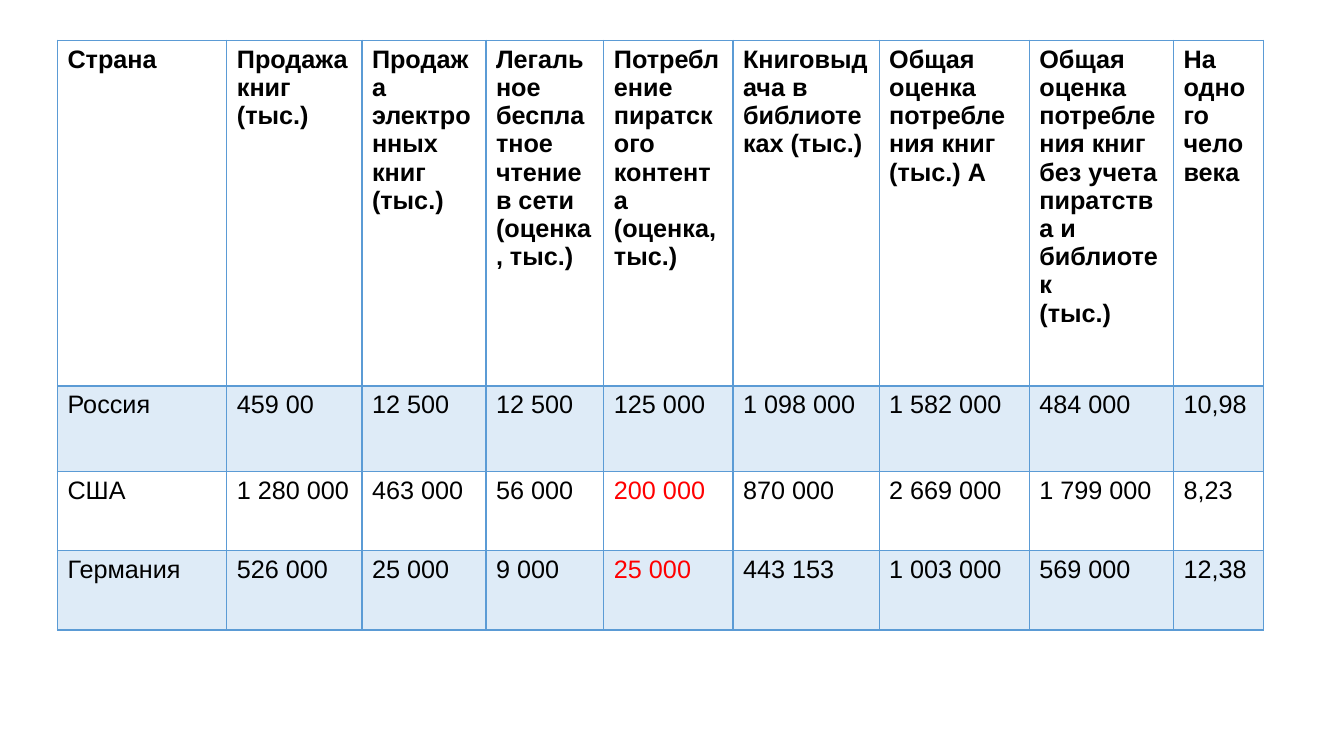
from lxml import etree
from pptx import Presentation
from pptx.dml.color import RGBColor
from pptx.oxml.ns import qn
from pptx.util import Inches, Pt

HEAD = [
    "Страна",
    "Продажа книг (тыс.)",
    "Продажа электронных книг (тыс.)",
    "Легальное бесплатное чтение в сети (оценка, тыс.)",
    "Потребление пиратского контента\n(оценка, тыс.)",
    "Книговыдача в библиотеках (тыс.)",
    "Общая оценка потребления книг\n(тыс.) А",
    "Общая оценка потребления книг без учета пиратства и библиотек\n(тыс.)",
    "На одного человека",
]
DATA = [
    ["Россия", "459 00", "12 500", "12 500", "125 000", "1 098 000", "1 582 000", "484 000", "10,98"],
    ["США", "1 280 000", "463 000", "56 000", "200 000", "870 000", "2 669 000", "1 799 000", "8,23"],
    ["Германия", "526 000", "25 000", "9 000", "25 000", "443 153", "1 003 000", "569 000", "12,38"],
]
ROWS = [HEAD] + DATA
WIDE = [1.68, 1.34, 1.23, 1.17, 1.28, 1.45, 1.49, 1.43, 0.89]
HIGH = [3.43, 0.85, 0.78, 0.79]
LEFT, TOP = 0.57, 0.4
RED_AT = {(2, 4), (3, 4)}
EDGE, BAND, RED, BLACK = "5B9BD5", "DEEBF7", "FF0000", "000000"
FONT = {"name": "Arial", "size": Pt(18)}


def paint(color, code):
    color.rgb = RGBColor.from_string(code)


def border(cell, row):
    props = cell._tc.get_or_add_tcPr()
    thick = {"T": 2 if row == 1 else 1, "B": 2 if row == 0 else 1}
    for side in "LRTB":
        line = etree.SubElement(props, qn("a:ln" + side), w=str(Pt(thick.get(side, 1))))
        fill = etree.SubElement(line, qn("a:solidFill"))
        etree.SubElement(fill, qn("a:srgbClr"), val=EDGE)


def write(cell, text, row, col):
    cell.text = text
    for para in cell.text_frame.paragraphs:
        for run in para.runs:
            for key, value in FONT.items():
                setattr(run.font, key, value)
            run.font.bold = row == 0
            paint(run.font.color, RED if (row, col) in RED_AT else BLACK)


def shade(cell, row):
    if row % 2:
        cell.fill.solid()
        paint(cell.fill.fore_color, BAND)
    else:
        cell.fill.background()


def main():
    deck = Presentation()
    deck.slide_width, deck.slide_height = Inches(13.33), Inches(7.5)
    slide = deck.slides.add_slide(deck.slide_layouts[6])
    box = [Inches(n) for n in (LEFT, TOP, sum(WIDE), sum(HIGH))]
    table = slide.shapes.add_table(len(ROWS), len(HEAD), *box).table
    table.first_row = table.horz_banding = False
    for col, width in zip(table.columns, WIDE):
        col.width = Inches(width)
    for row, height in zip(table.rows, HIGH):
        row.height = Inches(height)
    for row, texts in enumerate(ROWS):
        for col, text in enumerate(texts):
            cell = table.cell(row, col)
            write(cell, text, row, col)
            border(cell, row)
            shade(cell, row)
    deck.save("out.pptx")


if __name__ == "__main__":
    main()
